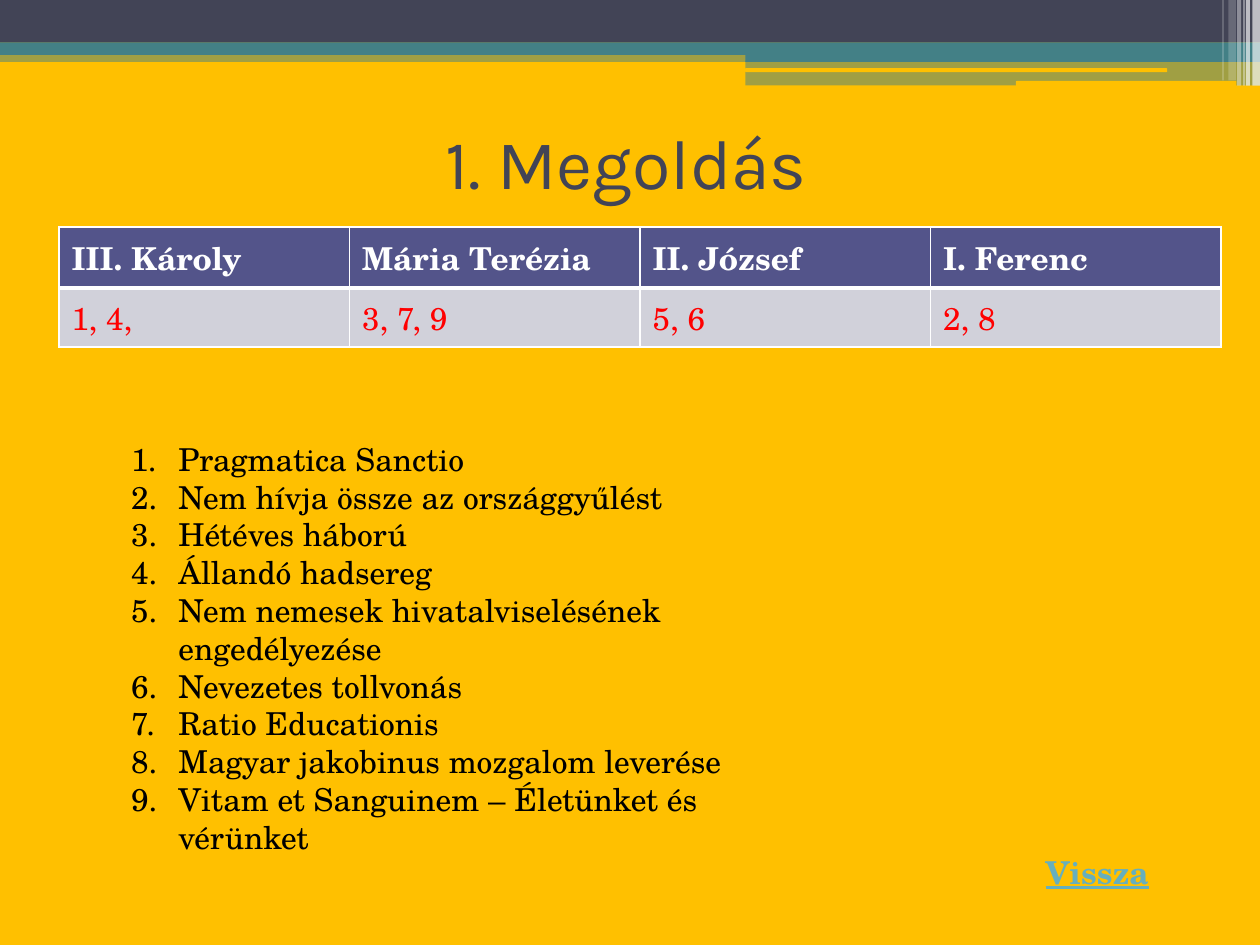
from lxml.etree import SubElement
from pptx import Presentation
from pptx.dml.color import RGBColor
from pptx.enum.shapes import MSO_SHAPE
from pptx.enum.text import MSO_ANCHOR, MSO_AUTO_SIZE, PP_ALIGN
from pptx.oxml import parse_xml
from pptx.oxml.ns import nsdecls, qn
from pptx.util import Pt

SERIF = "TeX Gyre Schola"
GOLD, NAVY, TEAL, WHITE = "FFC000", "424456", "438086", "FFFFFF"


def color(value):
    return RGBColor.from_string(value)


def write(p, text, size=18, font=SERIF, fill="000000", bold=False, underline=False):
    r = p.add_run()
    r.text = text
    r.font.size, r.font.name = Pt(size), font
    r.font.bold, r.font.underline = bold, underline
    r.font.color.rgb = color(fill)


prs = Presentation()
prs.slide_width, prs.slide_height = Pt(720), Pt(540)
s = prs.slides.add_slide(prs.slide_layouts[1])
s.background.fill.solid()
s.background.fill.fore_color.rgb = color(GOLD)

# Header bands and stripes: left, top, width, height, colour, opacity %
RECT, ROUND = MSO_SHAPE.RECTANGLE, MSO_SHAPE.ROUNDED_RECTANGLE
bands = [
    (RECT, 0, 28.8, 720, 6.6, TEAL, 50),
    (RECT, 0, 0, 720, 24.4, NAVY, 100),
    (RECT, 0, 24.2, 720, 7.2, TEAL, 100),
    (RECT, 426, 28.2, 294, 7.2, TEAL, 100),
    (RECT, 426, 34.6, 294, 14.2, TEAL, 50),
    (ROUND, 425.8, 39, 241.2, 2.2, GOLD, 100),
    (ROUND, 580.5, 46.3, 126, 2.9, GOLD, 100),
    (RECT, 715.6, 0, 4.4, 49, WHITE, 65),
    (RECT, 712, 0, 2.2, 49, WHITE, 65),
    (RECT, 710.5, 0, 0.7, 49, WHITE, 60),
    (RECT, 707, 0, 2.2, 49, WHITE, 40),
    (RECT, 702, 0, 4.3, 46, WHITE, 20),
    (RECT, 698.5, 0, 0.7, 46, WHITE, 30),
]
for kind, left, top, width, height, fill, opacity in bands:
    band = s.shapes.add_shape(kind, Pt(left), Pt(top), Pt(width), Pt(height))
    band.shadow.inherit = False
    band.line.fill.background()
    band.fill.solid()
    band.fill.fore_color.rgb = color(fill)
    if opacity < 100:
        rgb = band.fill._xPr.find(qn("a:solidFill"))[0]
        SubElement(rgb, qn("a:alpha"), val=str(opacity * 1000))

# Title
title = s.shapes.title
title.left, title.top, title.width, title.height = Pt(33.8), Pt(50.4), Pt(648), Pt(84.2)
title.text_frame.vertical_anchor = MSO_ANCHOR.MIDDLE
p = title.text_frame.paragraphs[0]
p.alignment = PP_ALIGN.CENTER
write(p, "1. Megoldás", size=40, font="Karla", fill=NAVY)

# Back button
button = s.shapes.add_shape(RECT, Pt(590.4), Pt(483.8), Pt(74.2), Pt(29))
button.shadow.inherit = False
button.line.fill.background()
button.fill.solid()
button.fill.fore_color.rgb = color(GOLD)
tf = button.text_frame
tf.word_wrap = False
tf.vertical_anchor = MSO_ANCHOR.TOP
tf.paragraphs[0].alignment = PP_ALIGN.LEFT
write(tf.paragraphs[0], "Vissza", fill="67AFBD", bold=True, underline=True)

# Numbered list
items = [
    "Pragmatica Sanctio",
    "Nem hívja össze az országgyűlést",
    "Hétéves háború",
    "Állandó hadsereg",
    "Nem nemesek hivatalviselésének engedélyezése",
    "Nevezetes tollvonás",
    "Ratio Educationis",
    "Magyar jakobinus mozgalom leverése",
    "Vitam et Sanguinem – Életünket és vérünket",
]
body = s.placeholders[1]
body.left, body.top, body.width, body.height = Pt(67.7), Pt(247.7), Pt(405.4), Pt(245)
tf = body.text_frame
tf.auto_size = MSO_AUTO_SIZE.NONE
for i, item in enumerate(items):
    p = tf.add_paragraph() if i else tf.paragraphs[0]
    p.space_before = Pt(0)
    pPr = p._p.get_or_add_pPr()
    pPr.set("marL", str(Pt(27)))
    pPr.set("indent", str(-Pt(27)))
    SubElement(pPr, qn("a:buFont"), typeface=SERIF)
    SubElement(pPr, qn("a:buAutoNum"), type="arabicPeriod")
    write(p, item)

# Table of rulers and their matching numbers
rows = [
    ["III. Károly", "Mária Terézia", "II. József", "I. Ferenc"],
    ["1, 4,", "3, 7, 9", "5, 6", "2, 8"],
]
table = s.shapes.add_table(2, 4, Pt(33.8), Pt(129.6), Pt(664), Pt(58.4)).table
for y, row in enumerate(rows):
    for x, text in enumerate(row):
        cell = table.cell(y, x)
        header = y == 0
        tcPr = cell._tc.get_or_add_tcPr()
        for side in "LRTB":
            heavy = (header and side == "B") or (not header and side == "T")
            tcPr.append(parse_xml(
                f'<a:ln{side} {nsdecls("a")} w="{Pt(3 if heavy else 1)}"><a:solidFill>'
                f'<a:srgbClr val="{WHITE}"/></a:solidFill></a:ln{side}>'))
        cell.fill.solid()
        cell.fill.fore_color.rgb = color("53548A" if header else "D1D1DA")
        write(cell.text_frame.paragraphs[0], text,
              fill=WHITE if header else "FF0000", bold=header)

prs.save("out.pptx")
